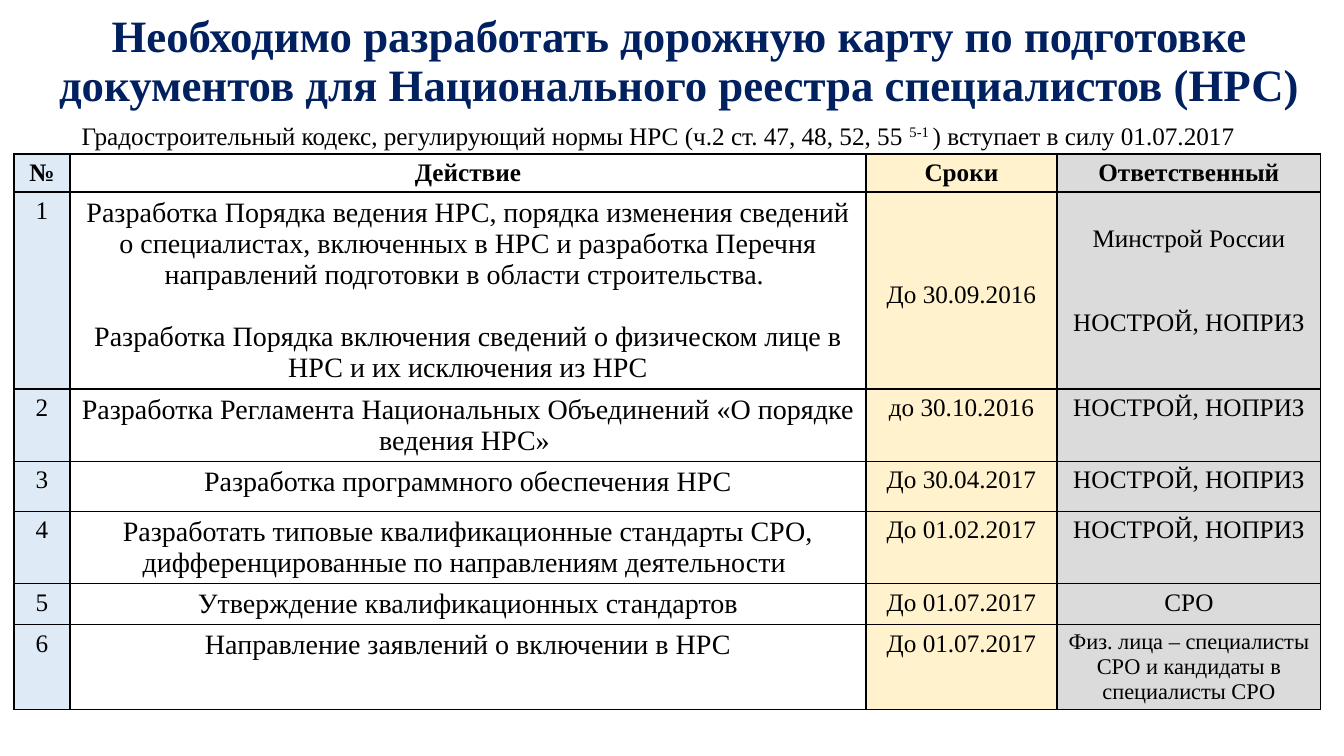
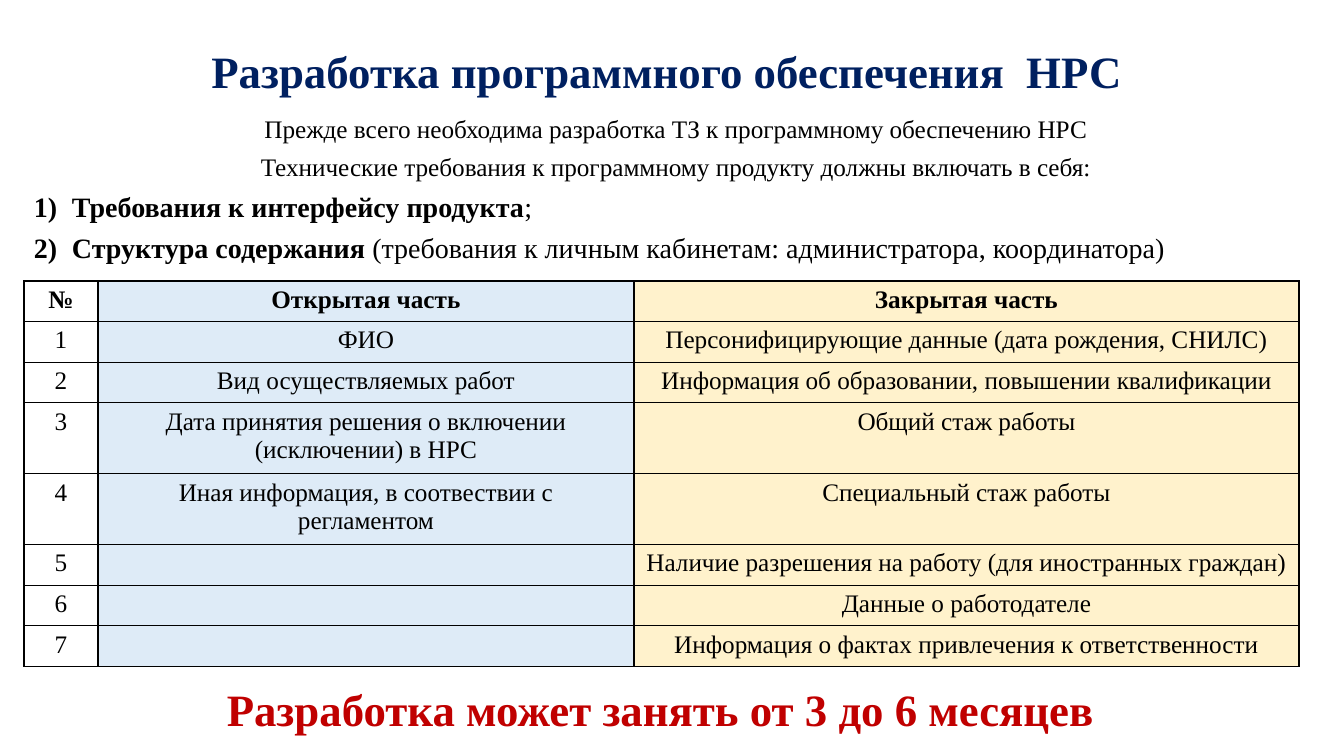
"""Build two slides on preparing documents for the national register of specialists."""
from dataclasses import dataclass

from lxml import etree
from pptx import Presentation
from pptx.dml.color import RGBColor
from pptx.enum.text import MSO_ANCHOR, MSO_AUTO_SIZE, PP_ALIGN
from pptx.oxml.ns import qn
from pptx.util import Emu, Pt

CENTER, LEFT = PP_ALIGN.CENTER, PP_ALIGN.LEFT
MIDDLE = MSO_ANCHOR.MIDDLE
NO_AUTOFIT = MSO_AUTO_SIZE.NONE
TITLE_ONLY = 5
EMU_PER_PX = 914400 / 100.8


@dataclass(frozen=True)
class Theme:
    font: str = "Times New Roman"
    navy: str = "002060"
    red: str = "C00000"
    black: str = "000000"
    white: str = "FFFFFF"
    blue: str = "DEEBF7"
    cream: str = "FFF2CC"
    grey: str = "DBDBDB"
    title_size: int = 32
    large_size: int = 20
    text_size: int = 18
    small_size: int = 16
    border: int = 1


THEME = Theme()
SLIDE_SIZE = (1344, 756)

ROADMAP = {
    "title": "Необходимо разработать дорожную карту по подготовке документов "
             "для Национального реестра специалистов (НРС)",
    "title_box": (25, 19, 1309, 87),
    "law_box": (14, 115, 1288, 40),
    "law": [
        ("Градостроительный кодекс, регулирующий нормы НРС (ч.2 ст. 47, 48, 52, 55 ", False),
        ("5-1 ", True),
        (") вступает в силу 01.07.2017", False),
    ],
    "table": {
        "origin": (14, 154),
        "columns": (56, 796, 191, 264),
        "rows": (38, 197, 72, 50, 72, 41, 85),
        "fills": (THEME.blue, THEME.white, THEME.cream, THEME.grey),
        "sizes": (THEME.text_size, THEME.large_size, THEME.text_size, THEME.text_size),
        "cells": [
            ("№", "Действие", "Сроки", "Ответственный"),
            ("1",
             "Разработка Порядка ведения НРС, порядка изменения сведений о специалистах, "
             "включенных в НРС и разработка Перечня направлений подготовки в области "
             "строительства. \n"
             "Разработка Порядка включения сведений о физическом лице в НРС и их "
             "исключения из НРС",
             "До 30.09.2016", "Минстрой России\nНОСТРОЙ, НОПРИЗ"),
            ("2", "Разработка Регламента Национальных Объединений «О порядке ведения НРС» ",
             "до 30.10.2016", "НОСТРОЙ, НОПРИЗ"),
            ("3", "Разработка программного обеспечения НРС",
             "До 30.04.2017", "НОСТРОЙ, НОПРИЗ"),
            ("4", "Разработать типовые квалификационные стандарты СРО, "
                  "дифференцированные по направлениям деятельности ",
             "До 01.02.2017", "НОСТРОЙ, НОПРИЗ"),
            ("5", "Утверждение квалификационных стандартов", "До 01.07.2017", "СРО"),
            ("6", "Направление заявлений о включении в НРС", "До 01.07.2017",
             "Физ. лица – специалисты СРО и кандидаты в специалисты СРО"),
        ],
        "styles": {
            (1, 1): {"gap": 22},
            (1, 2): {"top": 89},
            (1, 3): {"top": 33, "gap": 40},
            (6, 3): {"size": THEME.small_size},
        },
    },
}

SOFTWARE = {
    "title": "Разработка программного обеспечения  НРС ",
    "title_box": (93, 30, 1159, 87),
    "duration": "Разработка может занять от 3 до 6 месяцев",
    "duration_box": (70, 677, 1181, 65),
    "requirements_box": (24, 104, 1304, 158),
    "intro": [
        "Прежде всего необходима разработка ТЗ к программному обеспечению НРС",
        "Технические требования к программному продукту должны включать в себя:",
    ],
    "requirements": [
        ("Требования к интерфейсу продукта", ";"),
        ("Структура содержания ",
         "(требования к личным кабинетам: администратора, координатора)"),
    ],
    "table": {
        "origin": (24, 281),
        "columns": (74, 536, 665),
        "rows": (40, 41, 40, 71, 70, 41, 40, 41),
        "fills": (THEME.white, THEME.blue, THEME.cream),
        "sizes": (THEME.text_size,) * 3,
        "cells": [
            ("№", "Открытая часть", "Закрытая часть"),
            ("1", "ФИО", "Персонифицирующие данные (дата рождения, СНИЛС)"),
            ("2", "Вид осуществляемых работ",
             "Информация об образовании, повышении квалификации"),
            ("3", "Дата принятия решения о включении (исключении) в НРС",
             "Общий стаж работы"),
            ("4", "Иная информация, в соотвествии с регламентом",
             "Специальный стаж работы"),
            ("5", "", "Наличие разрешения на работу (для иностранных граждан)"),
            ("6", "", "Данные о работодателе"),
            ("7", "", "Информация о фактах привлечения к ответственности"),
        ],
        "styles": {},
    },
}


def px(value):
    return Emu(round(value * EMU_PER_PX))


def add_span(para, text, size=THEME.text_size, color=THEME.black, bold=False):
    span = para.add_run()
    span.text = text
    span.font.name = THEME.font
    span.font.size = Pt(size)
    span.font.bold = bold
    span.font.color.rgb = RGBColor.from_string(color)
    return span


def add_para(frame, first=False, align=CENTER):
    para = frame.paragraphs[0] if first else frame.add_paragraph()
    para.alignment = align
    return para


def add_titled_page(deck, title, place):
    page = deck.slides.add_slide(deck.slide_layouts[TITLE_ONLY])
    box = page.shapes.title
    box.left, box.top, box.width, box.height = map(px, place)
    frame = box.text_frame
    frame.auto_size = NO_AUTOFIT
    frame.vertical_anchor = MIDDLE
    para = add_para(frame, first=True)
    para.line_spacing = 0.9
    add_span(para, title, THEME.title_size, THEME.navy, True)
    return page


def add_text_frame(page, place):
    frame = page.shapes.add_textbox(*map(px, place)).text_frame
    frame.word_wrap = True
    return frame


def add_borders(cell):
    properties = cell._tc.get_or_add_tcPr()
    for index, side in enumerate(("lnL", "lnR", "lnT", "lnB")):
        line = etree.Element(qn(f"a:{side}"), w=str(Pt(THEME.border)))
        fill = etree.SubElement(line, qn("a:solidFill"))
        etree.SubElement(fill, qn("a:srgbClr"), val=THEME.black)
        properties.insert(index, line)


def fill_cell(cell, text, fill, size, bold, top=None, gap=0):
    cell.fill.solid()
    cell.fill.fore_color.rgb = RGBColor.from_string(fill)
    add_borders(cell)
    if top is not None:
        cell.margin_top = px(top)
    if not text:
        return
    for index, line in enumerate(text.split("\n")):
        para = add_para(cell.text_frame, first=index == 0)
        if index:
            para.space_before = Pt(gap)
        add_span(para, line, size, bold=bold)


def add_grid(page, grid):
    columns, rows = grid["columns"], grid["rows"]
    place = (*grid["origin"], sum(columns), sum(rows))
    table = page.shapes.add_table(len(rows), len(columns), *map(px, place)).table
    table.horz_banding = False
    for column, width in zip(table.columns, columns):
        column.width = px(width)
    for row, height in zip(table.rows, rows):
        row.height = px(height)
    for r, texts in enumerate(grid["cells"]):
        for c, text in enumerate(texts):
            size = THEME.text_size if r == 0 else grid["sizes"][c]
            style = {"size": size, **grid["styles"].get((r, c), {})}
            fill_cell(table.cell(r, c), text, grid["fills"][c], bold=r == 0, **style)


def number_para(para, indent):
    properties = para._p.get_or_add_pPr()
    properties.set("marL", str(px(indent)))
    properties.set("indent", str(-px(indent)))
    etree.SubElement(properties, qn("a:buFont"), typeface="+mj-lt")
    etree.SubElement(properties, qn("a:buAutoNum"), type="arabicParenR")


def build_roadmap(deck):
    page = add_titled_page(deck, ROADMAP["title"], ROADMAP["title_box"])
    add_grid(page, ROADMAP["table"])
    para = add_para(add_text_frame(page, ROADMAP["law_box"]), first=True)
    for text, raised in ROADMAP["law"]:
        span = add_span(para, text)
        if raised:
            span.font._element.set("baseline", "30000")


def build_software(deck):
    page = add_titled_page(deck, SOFTWARE["title"], SOFTWARE["title_box"])
    para = add_para(add_text_frame(page, SOFTWARE["duration_box"]), first=True)
    add_span(para, SOFTWARE["duration"], THEME.title_size, THEME.red, True)
    add_grid(page, SOFTWARE["table"])
    frame = add_text_frame(page, SOFTWARE["requirements_box"])
    for index, text in enumerate(SOFTWARE["intro"]):
        add_span(add_para(frame, first=index == 0), text)
    for name, detail in SOFTWARE["requirements"]:
        para = add_para(frame, align=LEFT)
        add_span(para, name, THEME.large_size, bold=True)
        add_span(para, detail, THEME.large_size)
    for para in frame.paragraphs:
        para.line_spacing = 1.15
        para.space_before = Pt(2)
    for para in frame.paragraphs[len(SOFTWARE["intro"]):]:
        number_para(para, 38)


def main():
    deck = Presentation()
    deck.slide_width, deck.slide_height = map(px, SLIDE_SIZE)
    build_roadmap(deck)
    build_software(deck)
    deck.save("out.pptx")


if __name__ == "__main__":
    main()
